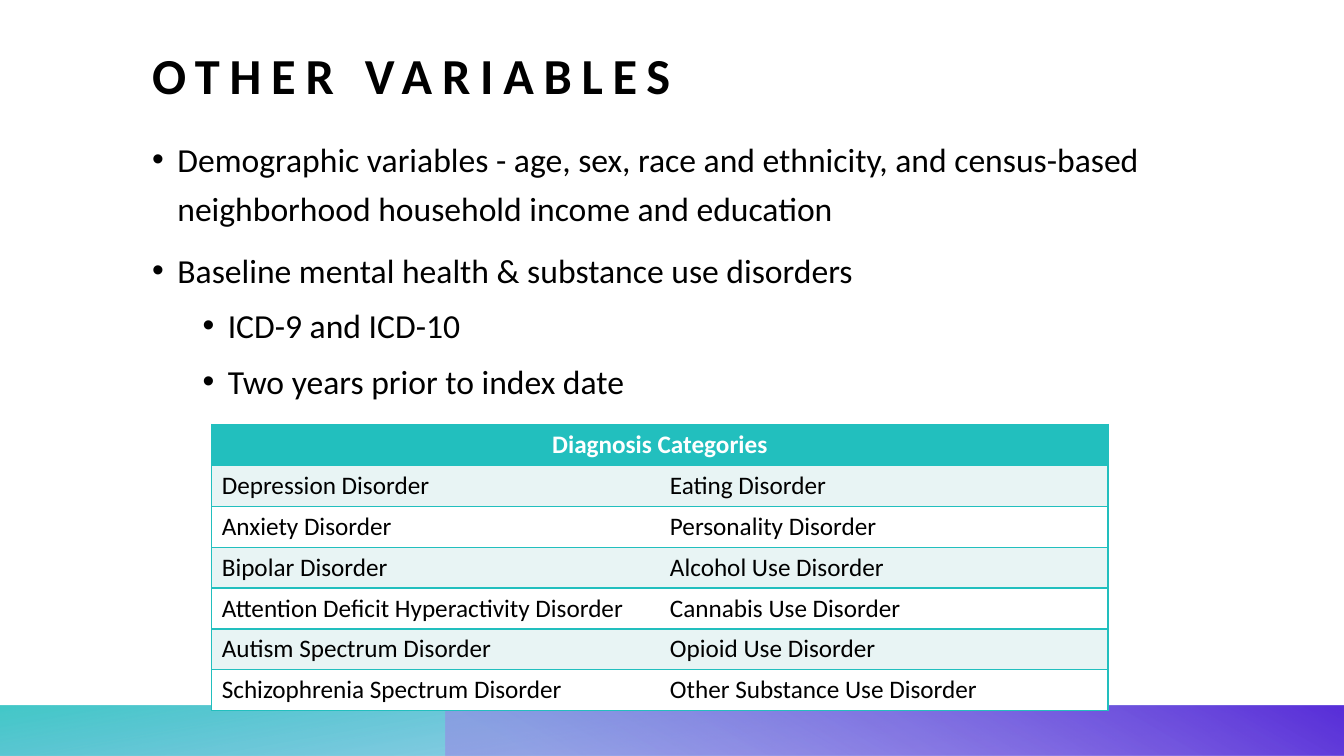
"""Build the slide on other study variables with its diagnosis table."""
from dataclasses import dataclass

from lxml import etree
from pptx import Presentation
from pptx.dml.color import RGBColor
from pptx.enum import shapes, text
from pptx.oxml import ns
from pptx.util import Inches, Pt

FONT = "Calibri"
BLACK = RGBColor(0x00, 0x00, 0x00)
WHITE = RGBColor(0xFF, 0xFF, 0xFF)
TEAL = RGBColor(0x22, 0xBF, 0xBE)
PALE_TEAL = RGBColor(0xE8, 0xF4, 0xF4)
BLUE = RGBColor(0x17, 0x87, 0xD5)
LILAC = RGBColor(0x9B, 0x82, 0xE8)
VIOLET = RGBColor(0x59, 0x2F, 0xD9)


@dataclass(frozen=True)
class Stop:
    position: int
    color: RGBColor
    opacity: int = 100


@dataclass(frozen=True)
class Band:
    left: float
    width: float
    rotation: int
    angle: int
    stops: tuple[Stop, ...]


@dataclass(frozen=True)
class Bullet:
    words: str
    indent: float = 0.25
    before: int = 10


BANDS = (
    Band(0, 13.33, 180, 100, (Stop(14, BLUE, 28), Stop(100, TEAL, 85))),
    Band(4.42, 8.92, 0, 240, (Stop(9, LILAC, 55), Stop(99, VIOLET))),
)
BULLETS = (
    Bullet("Demographic variables - age, sex, race and ethnicity, and census-based "
           "neighborhood household income and education", before=0),
    Bullet("Baseline mental health & substance use disorders"),
    Bullet("ICD-9 and ICD-10", 0.75, 5),
    Bullet("Two years prior to index date", 0.75, 5),
)
DIAGNOSES = (
    ("Depression Disorder", "Eating Disorder"),
    ("Anxiety Disorder", "Personality Disorder"),
    ("Bipolar Disorder", "Alcohol Use Disorder"),
    ("Attention Deficit Hyperactivity Disorder", "Cannabis Use Disorder"),
    ("Autism Spectrum Disorder", "Opioid Use Disorder"),
    ("Schizophrenia Spectrum Disorder", "Other Substance Use Disorder"),
)


def sub(parent, tag: str, **attributes):
    return etree.SubElement(parent, ns.qn(tag), {k: str(v) for k, v in attributes.items()})


def set_font(p, size: int, color: RGBColor = BLACK, bold: bool = False) -> None:
    p.font.name = FONT
    p.font.size = Pt(size)
    p.font.bold = bold
    p.font.color.rgb = color


def clear_margins(tf) -> None:
    tf.margin_left = tf.margin_right = tf.margin_top = tf.margin_bottom = 0
    tf.word_wrap = True
    tf.auto_size = text.MSO_AUTO_SIZE.NONE


def add_band(s, band: Band) -> None:
    sp = s.shapes.add_shape(shapes.MSO_SHAPE.RECTANGLE, Inches(band.left), Inches(7),
                            Inches(band.width), Inches(0.5))
    sp.shadow.inherit = False
    sp.rotation = band.rotation
    sp.line.fill.background()
    sp.fill.background()
    props = sp._element.spPr
    props.find(ns.qn("a:xfrm")).set("flipH", "1")
    grad = etree.Element(ns.qn("a:gradFill"), rotWithShape="1")
    stop_list = sub(grad, "a:gsLst")
    for stop in band.stops:
        gs = sub(stop_list, "a:gs", pos=stop.position * 1000)
        color = sub(gs, "a:srgbClr", val=stop.color)
        sub(color, "a:alpha", val=stop.opacity * 1000)
    sub(grad, "a:lin", ang=band.angle * 60000, scaled=0)
    props.replace(props.find(ns.qn("a:noFill")), grad)


def add_title(s, words: str) -> None:
    sp = s.shapes.title
    sp.left, sp.top, sp.width, sp.height = map(Inches, (1.51, -0.31, 11.2, 1.35))
    tf = sp.text_frame
    clear_margins(tf)
    tf.vertical_anchor = text.MSO_ANCHOR.BOTTOM
    p = tf.paragraphs[0]
    p.alignment = text.PP_ALIGN.LEFT
    r = p.add_run()
    r.text = words
    r._r.get_or_add_rPr().set("spc", "700")
    set_font(p, 36, bold=True)


def add_bullets(s, bullets: tuple[Bullet, ...]) -> None:
    sp = s.shapes.add_textbox(Inches(1.51), Inches(1.3), Inches(11.2), Inches(4.33))
    tf = sp.text_frame
    clear_margins(tf)
    for i, bullet in enumerate(bullets):
        p = tf.add_paragraph() if i else tf.paragraphs[0]
        p.text = bullet.words
        props = p._p.get_or_add_pPr()
        props.set("marL", str(Inches(bullet.indent)))
        props.set("indent", str(Inches(-0.25)))
        sub(props, "a:buFont", typeface="Arial")
        sub(props, "a:buChar", char="•")
        p.line_spacing = 1.2
        p.space_before = Pt(bullet.before)
        set_font(p, 24)


def format_cell(cell, fill: RGBColor, sides: str) -> None:
    props = cell._tc.get_or_add_tcPr()
    for side in "LRTB":
        ln = sub(props, f"a:ln{side}", w=Pt(1))
        if side in sides:
            sub(sub(ln, "a:solidFill"), "a:srgbClr", val=TEAL)
        else:
            sub(ln, "a:noFill")
    cell.fill.solid()
    cell.fill.fore_color.rgb = fill


def add_diagnoses(s, rows: tuple[tuple[str, str], ...]) -> None:
    count = len(rows) + 1
    table = s.shapes.add_table(count, 2, Inches(2.1), Inches(4.21),
                               Inches(8.89), Inches(0.406 * count)).table
    table.horz_banding = False
    header = table.cell(0, 0)
    header.merge(table.cell(0, 1))
    header.text = "Diagnosis Categories"
    p = header.text_frame.paragraphs[0]
    p.alignment = text.PP_ALIGN.CENTER
    set_font(p, 18, WHITE, True)
    for cell in table.rows[0].cells:
        format_cell(cell, TEAL, "LRTB")
    for i, names in enumerate(rows, 1):
        for j, name in enumerate(names):
            cell = table.cell(i, j)
            cell.text = name
            set_font(cell.text_frame.paragraphs[0], 18)
            format_cell(cell, PALE_TEAL if i % 2 else WHITE, "RTB" if j else "LTB")


def main() -> None:
    prs = Presentation()
    prs.slide_width, prs.slide_height = Inches(13.33), Inches(7.5)
    s = prs.slides.add_slide(prs.slide_layouts.get_by_name("Title Only"))
    for band in BANDS:
        add_band(s, band)
    add_title(s, "OTHER VARIABLES")
    add_bullets(s, BULLETS)
    add_diagnoses(s, DIAGNOSES)
    prs.save("out.pptx")


if __name__ == "__main__":
    main()
